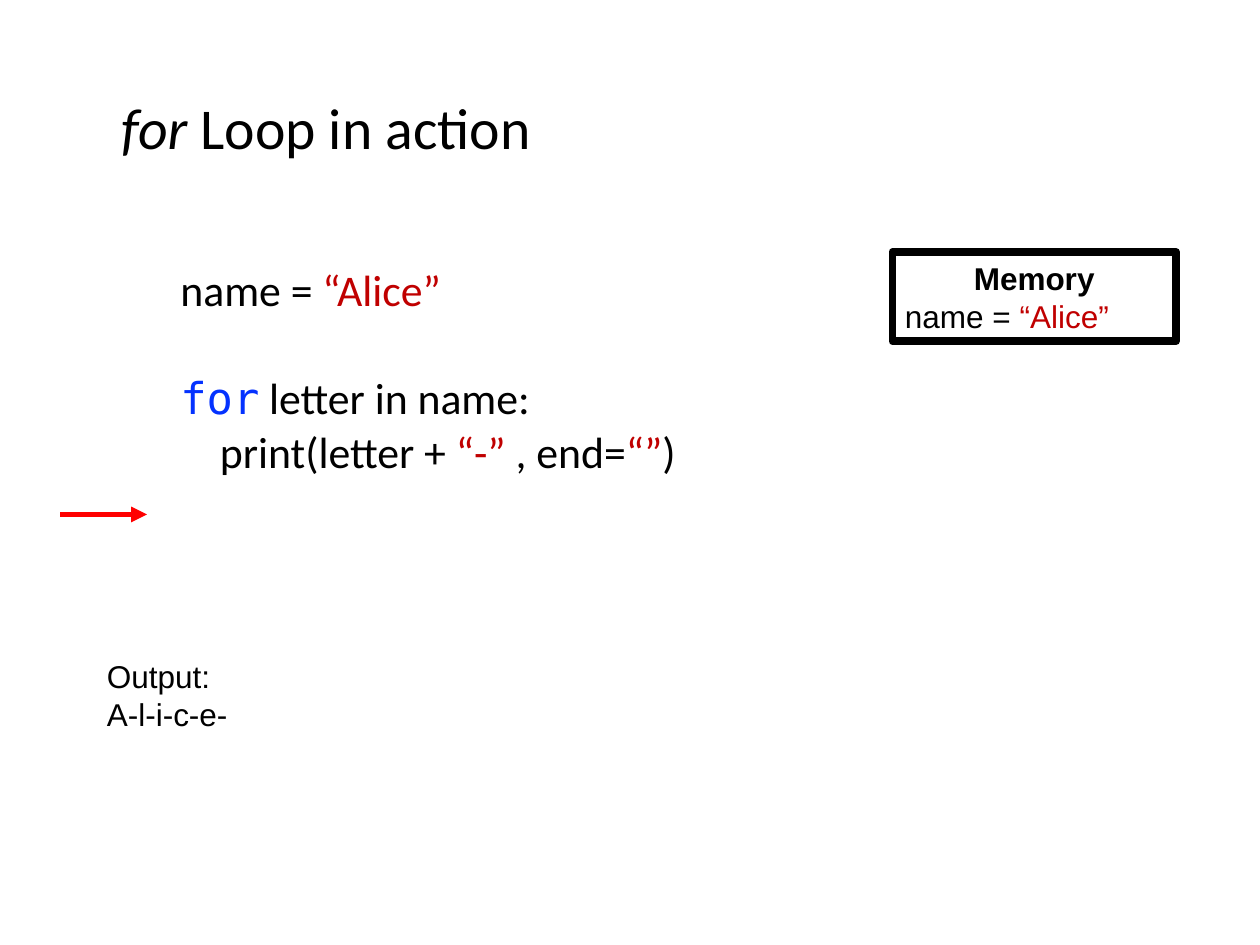
import pptx
import pptx.util
import pptx.dml.color
import pptx.enum.shapes
import pptx.enum.text
import pptx.oxml.ns
from lxml import etree

Pt = pptx.util.Pt
Align = pptx.enum.text.PP_ALIGN
Anchor = pptx.enum.text.MSO_ANCHOR
BLACK, STRING, KEYWORD, ARROW = "000000", "C00000", "0432FF", "FF0000"


def color(value):
    return pptx.dml.color.RGBColor.from_string(value)


def write(para, spans, size, name):
    """Fill a paragraph with (text, colour) spans in one font."""
    para.font.size = Pt(size)
    para.font.name = name
    for text, value in spans:
        span = para.add_run()
        span.text = text
        span.font.color.rgb = color(value)


deck = pptx.Presentation()
deck.slide_width, deck.slide_height = Pt(720), Pt(540)
page = deck.slides.add_slide(deck.slide_layouts[5])

# Title
title = page.shapes.title
title.left, title.top, title.width, title.height = Pt(62), Pt(48), Pt(624), Pt(54)
title.text_frame.auto_size = pptx.enum.text.MSO_AUTO_SIZE.NONE
title.text_frame.vertical_anchor = Anchor.MIDDLE
para = title.text_frame.paragraphs[0]
para.alignment = Align.LEFT
para.line_spacing = 0.9
write(para, [("for", BLACK), (" Loop in action", BLACK)], 33, "Calibri")
para.runs[0].font.italic = True

# Code: space before and spans of each line
code_lines = [
    (0, [("name = ", BLACK), ("“Alice”", STRING)]),
    (34.7, [("for", KEYWORD), (" letter in name:", BLACK)]),
    (3.8, [("    print(letter + ", BLACK), ("“-”", STRING),
           (" , end=", BLACK), ("“”", STRING), (")", BLACK)]),
]
code = page.shapes.add_textbox(Pt(96), Pt(150), Pt(336), Pt(330)).text_frame
code.word_wrap = True
for index, (gap, spans) in enumerate(code_lines):
    para = code.add_paragraph() if index else code.paragraphs[0]
    para.line_spacing = 0.9
    para.space_before = Pt(gap)
    write(para, spans, 25, "Calibri")
code.paragraphs[1].runs[0].font.name = "DejaVu Sans Mono"

# Memory box
memory = page.shapes.add_shape(
    pptx.enum.shapes.MSO_SHAPE.RECTANGLE, Pt(510), Pt(144), Pt(162), Pt(51))
memory.shadow.inherit = False
memory.fill.background()
memory.line.color.rgb = color(BLACK)
memory.line.width = Pt(4.5)
etree.SubElement(memory.line._get_or_add_ln(), pptx.oxml.ns.qn("a:round"))
memory.text_frame.vertical_anchor = Anchor.MIDDLE
heading = memory.text_frame.paragraphs[0]
heading.alignment = Align.CENTER
write(heading, [("Memory", BLACK)], 18, "Arial")
heading.font.bold = True
variable = memory.text_frame.add_paragraph()
variable.alignment = Align.LEFT
write(variable, [("name = ", BLACK), ("“Alice”", STRING)], 18, "Arial")

# Arrow marking the current line
arrow = page.shapes.add_connector(
    pptx.enum.shapes.MSO_CONNECTOR.STRAIGHT, Pt(34.4), Pt(294), Pt(84), Pt(294))
arrow.line.color.rgb = color(ARROW)
arrow.line.width = Pt(3)
etree.SubElement(arrow.line._get_or_add_ln(), pptx.oxml.ns.qn("a:tailEnd"), type="triangle")
etree.SubElement(arrow._element.spPr, pptx.oxml.ns.qn("a:effectLst"))

# Output
output = page.shapes.add_textbox(Pt(54), Pt(372), Pt(294), Pt(73)).text_frame
output.word_wrap = True
write(output.paragraphs[0], [("Output:", BLACK)], 18, "Arial")
write(output.add_paragraph(), [("A-l-i-c-e-", BLACK)], 18, "Arial")

deck.save("out.pptx")
